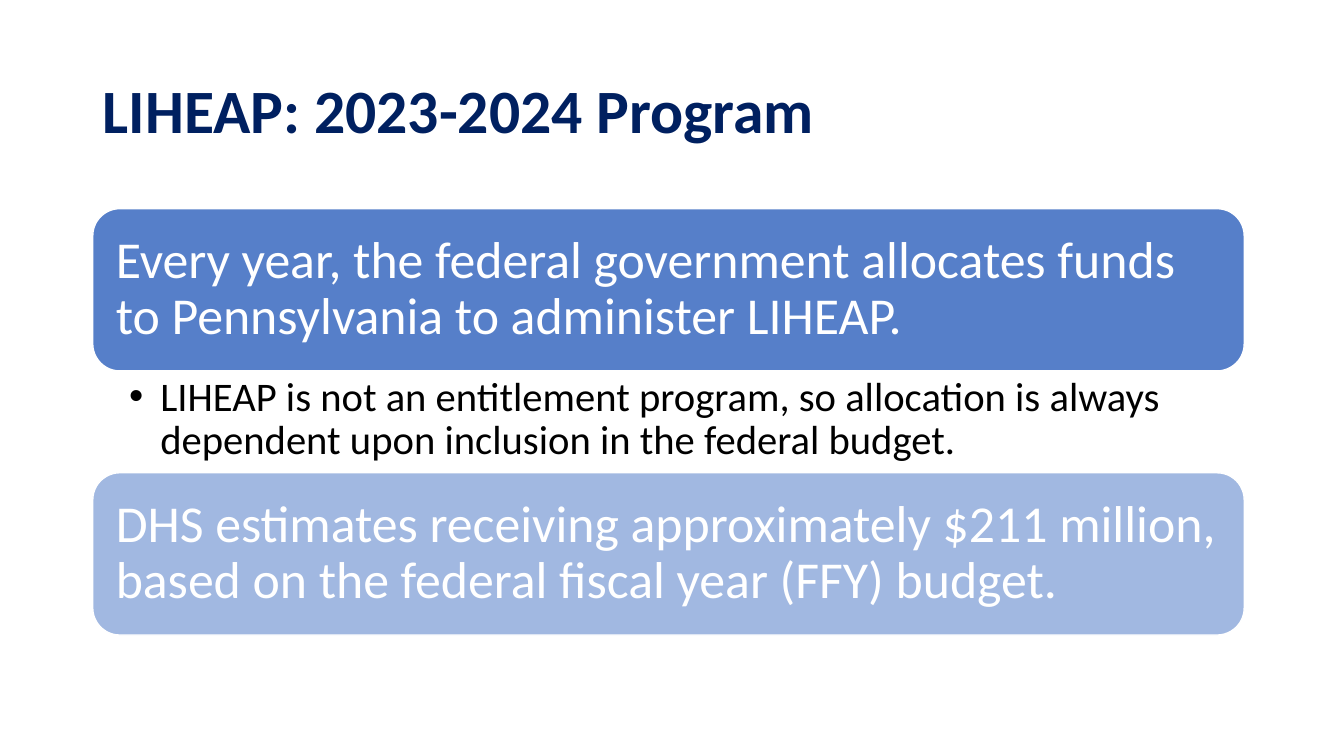
from lxml.etree import SubElement
from pptx import Presentation
from pptx.dml.color import RGBColor
from pptx.enum.shapes import MSO_SHAPE
from pptx.enum.text import MSO_ANCHOR, MSO_AUTO_SIZE, PP_ALIGN
from pptx.oxml.ns import qn
from pptx.util import Inches, Pt

NAVY = RGBColor(0x00, 0x20, 0x60)
BLUE = RGBColor(0x44, 0x72, 0xC4)
WHITE = RGBColor(0xFF, 0xFF, 0xFF)
BLACK = RGBColor(0x00, 0x00, 0x00)

TITLE = "LIHEAP: 2023-2024 Program"
BANNERS = [
    ("Every year, the federal government allocates funds to Pennsylvania "
     "to administer LIHEAP.", 90),
    ("DHS estimates receiving approximately $211 million, based on the "
     "federal fiscal year (FFY) budget.", 50),
]
DETAIL = ("LIHEAP is not an entitlement program, so allocation is always "
          "dependent upon inclusion in the federal budget.")

LEFT, TOP, WIDTH = 0.92, 2.07, 11.42
BANNER_HEIGHT, DETAIL_HEIGHT = 1.61, 1.01


def place(shape, left, top, width, height):
    shape.left, shape.top = Inches(left), Inches(top)
    shape.width, shape.height = Inches(width), Inches(height)


def write(shape, text, size, color, anchor, insets, bold=False):
    frame = shape.text_frame
    frame.text = text
    frame.word_wrap = True
    frame.auto_size = MSO_AUTO_SIZE.NONE
    frame.vertical_anchor = anchor
    frame.margin_left, frame.margin_top, frame.margin_right, frame.margin_bottom = (
        Inches(inset) for inset in insets)
    para = frame.paragraphs[0]
    para.alignment = PP_ALIGN.LEFT
    para.line_spacing = 0.9
    para.space_before = Pt(0)
    font = para.runs[0].font
    font.name, font.size, font.bold = "Calibri", Pt(size), bold
    font.color.rgb = color
    return para


def add_banner(page, text, opacity, top):
    banner = page.shapes.add_shape(
        MSO_SHAPE.ROUNDED_RECTANGLE, Inches(LEFT), Inches(top),
        Inches(WIDTH), Inches(BANNER_HEIGHT))
    banner.shadow.inherit = False
    banner.fill.solid()
    banner.fill.fore_color.rgb = BLUE
    color = banner.fill._xPr.find(qn("a:solidFill")).find(qn("a:srgbClr"))
    SubElement(color, qn("a:alpha")).set("val", str(opacity * 1000))
    banner.line.color.rgb = WHITE
    banner.line.width = Pt(1)
    write(banner, text, 37, WHITE, MSO_ANCHOR.MIDDLE, [0.15] * 4)


def add_bullet(para, indent):
    properties = para._p.get_or_add_pPr()
    properties.set("marL", str(Inches(indent)))
    properties.set("indent", str(-Inches(indent)))
    SubElement(properties, qn("a:buFont")).set("typeface", "Arial")
    SubElement(properties, qn("a:buChar")).set("char", "•")


def main():
    deck = Presentation()
    deck.slide_width, deck.slide_height = Inches(13.33), Inches(7.5)
    page = deck.slides.add_slide(deck.slide_layouts[1])

    title = page.shapes.title
    place(title, LEFT, 0.4, 11.5, 1.45)
    write(title, TITLE, 44, NAVY, MSO_ANCHOR.MIDDLE, (0.1, 0.05, 0.1, 0.05), bold=True)

    for index, (text, opacity) in enumerate(BANNERS):
        add_banner(page, text, opacity, TOP + index * (BANNER_HEIGHT + DETAIL_HEIGHT))

    detail = page.placeholders[1]
    place(detail, LEFT, TOP + BANNER_HEIGHT, WIDTH, DETAIL_HEIGHT)
    para = write(detail, DETAIL, 29, BLACK, MSO_ANCHOR.TOP, (0.36, 0.05, 0.29, 0.05))
    add_bullet(para, 0.31)

    deck.save("out.pptx")


if __name__ == "__main__":
    main()
